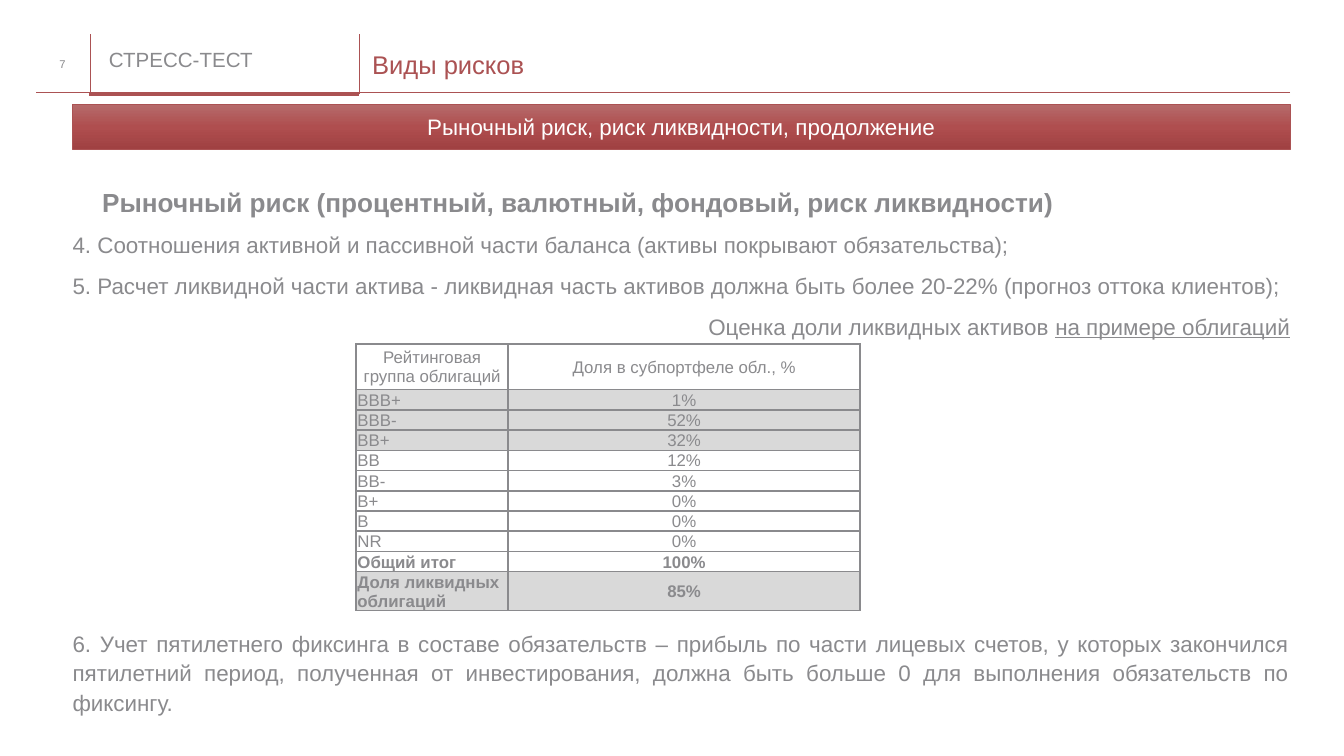
"""Build the stress-test slide on market and liquidity risk."""
from copy import deepcopy
from dataclasses import dataclass

from lxml import etree
from pptx import Presentation
from pptx.dml.color import RGBColor
from pptx.enum.shapes import MSO_CONNECTOR, MSO_SHAPE
from pptx.enum.text import MSO_ANCHOR, PP_ALIGN
from pptx.oxml.ns import qn
from pptx.util import Inches, Pt

LEFT, CENTER, RIGHT, JUSTIFY = PP_ALIGN.LEFT, PP_ALIGN.CENTER, PP_ALIGN.RIGHT, PP_ALIGN.JUSTIFY
TOP, MIDDLE, BOTTOM = MSO_ANCHOR.TOP, MSO_ANCHOR.MIDDLE, MSO_ANCHOR.BOTTOM
STRAIGHT, RECTANGLE = MSO_CONNECTOR.STRAIGHT, MSO_SHAPE.RECTANGLE


@dataclass(frozen=True)
class Theme:
    font: str = "Arial"
    red: str = "AB5253"
    gray: str = "8A8A8D"
    white: str = "FFFFFF"
    shade: str = "D9D9D9"
    banner: tuple = ((0, "B56A6A"), (0.5, "AF4E4F"), (1, "A04142"))
    title: float = 13.7
    heading: float = 14
    body: float = 12
    section: float = 11
    cell: float = 9
    number: float = 6
    gap: float = 7.5


theme = Theme()


def style_para(para, size, color=theme.gray, align=LEFT, bold=False):
    para.alignment = align
    for span in para.runs:
        span.font.name = theme.font
        span.font.size = Pt(size)
        span.font.bold = bold
        span.font.color.rgb = RGBColor.from_string(color)


def add_box(left, top, width, height, fill=None, anchor=MIDDLE, inset=0):
    box = page.shapes.add_shape(RECTANGLE, Inches(left), Inches(top), Inches(width), Inches(height))
    box.shadow.inherit = False
    box.line.fill.background()
    if fill:
        box.fill.solid()
        box.fill.fore_color.rgb = RGBColor.from_string(fill)
    else:
        box.fill.background()
    frame = box.text_frame
    frame.word_wrap = True
    frame.vertical_anchor = anchor
    frame.margin_left = Inches(inset)
    frame.margin_right = frame.margin_top = frame.margin_bottom = 0
    return box


deck = Presentation()
deck.slide_width = Inches(10)
deck.slide_height = deck.slide_width * 9 // 16
page = deck.slides.add_slide(deck.slide_layouts[6])

header_lines = [
    (0.66, 0.69, 0.27, 0.69, 0.25),
    (2.67, 0.7, 0.66, 0.7, 2.25),
    (9.6, 0.69, 2.66, 0.69, 0.25),
    (0.67, 0.7, 0.67, 0.25, 0.25),
    (2.67, 0.7, 2.67, 0.25, 0.25),
]
for *ends, weight in header_lines:
    rule = page.shapes.add_connector(STRAIGHT, *[Inches(end) for end in ends])
    rule.line.width = Pt(weight)
    rule.line.color.rgb = RGBColor.from_string(theme.red)
    etree.SubElement(rule._element.spPr, qn("a:effectLst"))

body = add_box(0.54, 1.11, 9.06, 4.45, theme.white, TOP)
body.text_frame.margin_top = Inches(0.34)
points = [
    (["Рыночный риск (процентный, валютный, фондовый, риск ликвидности)"], theme.heading, JUSTIFY, 0.7, 0),
    (["4. Соотношения активной и пассивной части баланса (активы покрывают обязательства);"],
     theme.body, JUSTIFY, 1.0, theme.gap),
    (["5. Расчет ликвидной части актива - ликвидная часть активов должна быть более 20-22% "
      "(прогноз оттока клиентов);"], theme.body, JUSTIFY, 1.0, theme.gap),
    (["Оценка доли ликвидных активов ", "на примере облигаций"], theme.body, RIGHT, 1.0, theme.gap),
    (["6. Учет пятилетнего фиксинга в составе обязательств – прибыль по части лицевых счетов, "
      "у которых закончился пятилетний период, полученная от инвестирования, должна быть больше 0 "
      "для выполнения обязательств по фиксингу."], theme.body, JUSTIFY, 1.1, 154),
]
for index, (texts, size, align, spacing, before) in enumerate(points):
    para = body.text_frame.add_paragraph() if index else body.text_frame.paragraphs[0]
    for text in texts:
        para.add_run().text = text
    style_para(para, size, align=align, bold=size == theme.heading)
    para.line_spacing = spacing
    para.space_before = Pt(before)
    if len(texts) > 1:
        para.runs[-1].font.underline = True
heading = body.text_frame.paragraphs[0]
heading._p.get_or_add_pPr().set("marL", str(Inches(0.22)))

section = add_box(0.69, 0.24, 1.97, 0.43, theme.white, inset=0.12)
section.text_frame.text = "СТРЕСС-ТЕСТ"
para = section.text_frame.paragraphs[0]
style_para(para, theme.section)
para.line_spacing = 0.9
para.space_before = Pt(theme.gap)

banner = add_box(0.54, 0.78, 9.06, 0.33)
banner.text_frame.text = "Рыночный риск, риск ликвидности, продолжение"
style_para(banner.text_frame.paragraphs[0], theme.body, theme.white, CENTER)
banner.line.color.rgb = RGBColor.from_string(theme.red)
banner.line.width = Pt(0.5)
banner.fill.gradient()
banner.fill.gradient_angle = 270
stop_list = banner._element.spPr.find(qn("a:gradFill")).find(qn("a:gsLst"))
stop_list.insert(1, deepcopy(stop_list[0]))
for stop, (position, color) in zip(banner.fill.gradient_stops, theme.banner):
    stop.position = position
    stop.color.rgb = RGBColor.from_string(color)

title = add_box(2.77, 0.33, 6.83, 0.33)
title.text_frame.text = "Виды рисков"
style_para(title.text_frame.paragraphs[0], theme.title, theme.red)
title.text_frame.paragraphs[0].line_spacing = 0.9

ratings = [
    ("Рейтинговая группа облигаций", "Доля в субпортфеле обл., %"),
    ("BBB+", "1%"),
    ("BBB-", "52%"),
    ("BB+", "32%"),
    ("BB", "12%"),
    ("BB-", "3%"),
    ("B+", "0%"),
    ("B", "0%"),
    ("NR", "0%"),
    ("Общий итог", "100%"),
    ("Доля ликвидных облигаций", "85%"),
]
shaded_rows, total_rows = (1, 2, 3, 10), (9, 10)
table = page.shapes.add_table(len(ratings), 2, Inches(2.65), Inches(2.56), Inches(3.75), Inches(1.74)).table
table.first_row = table.horz_banding = False
table.columns[0].width, table.columns[1].width = Inches(1.13), Inches(2.62)
for row, texts in enumerate(ratings):
    table.rows[row].height = Inches(0.14 if row else 0.34)
    for column, text in enumerate(texts):
        cell = table.cell(row, column)
        cell.text = text
        cell.margin_left = cell.margin_right = cell.margin_top = Inches(0.01)
        cell.margin_bottom = 0
        cell.vertical_anchor = BOTTOM if row and (column == 0 or row == 9) else MIDDLE
        align = LEFT if row and column == 0 else CENTER
        style_para(cell.text_frame.paragraphs[0], theme.cell, align=align, bold=row in total_rows)
        properties = cell._tc.get_or_add_tcPr()
        for side in ("a:lnL", "a:lnR", "a:lnT", "a:lnB"):
            border = etree.SubElement(properties, qn(side), w=str(Pt(1)))
            paint = etree.SubElement(border, qn("a:solidFill"))
            etree.SubElement(paint, qn("a:srgbClr"), val=theme.gray)
        if row in shaded_rows:
            cell.fill.solid()
            cell.fill.fore_color.rgb = RGBColor.from_string(theme.shade)
        else:
            cell.fill.background()

number = add_box(0.27, 0.33, 0.39, 0.3)
number.text_frame.text = "7"
style_para(number.text_frame.paragraphs[0], theme.number, align=CENTER)

deck.save("out.pptx")
